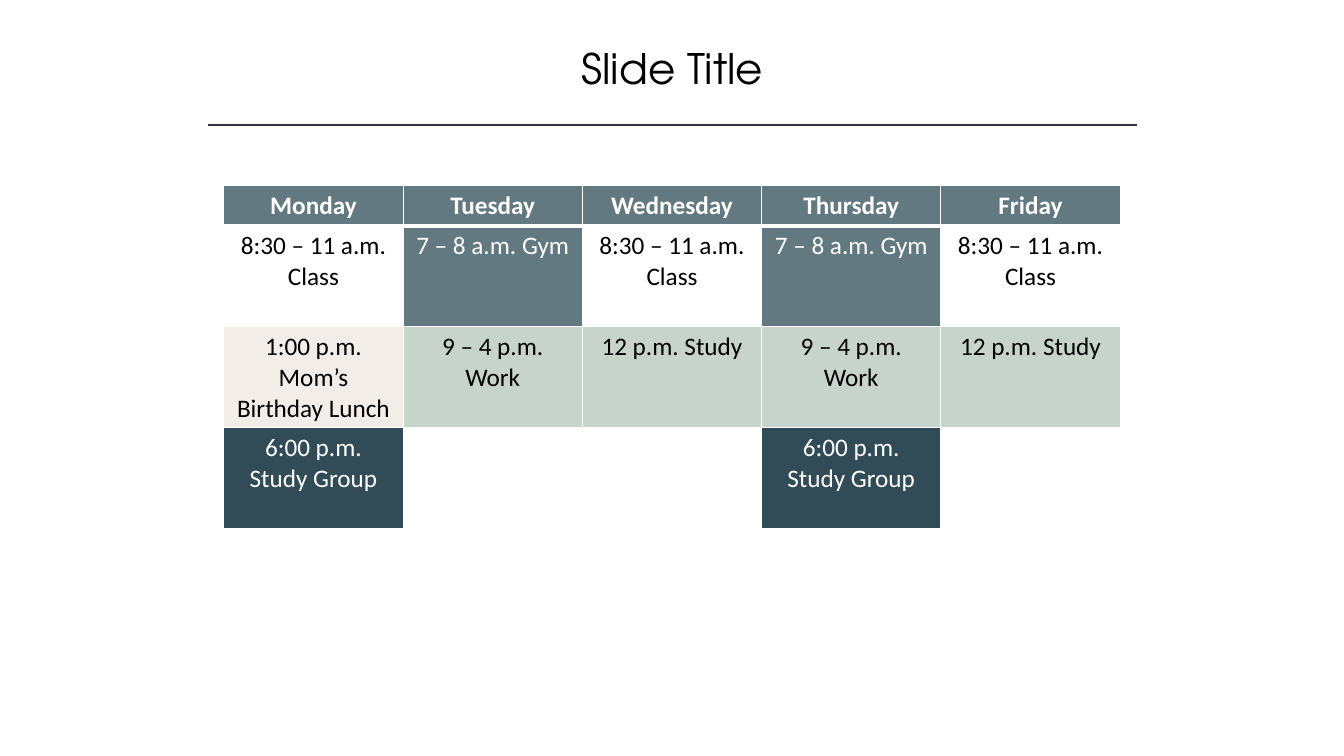
"""Build a slide with a title, a rule and a weekly schedule table."""
from lxml.etree import SubElement
from pptx import Presentation
from pptx.dml.color import RGBColor
from pptx.enum.shapes import MSO_CONNECTOR
from pptx.enum.text import MSO_AUTO_SIZE, PP_ALIGN
from pptx.oxml.ns import qn
from pptx.util import Inches, Pt

COLORS = {
    "black": "000000", "white": "FFFFFF", "rule": "323542", "slate": "627981",
    "cream": "F3EDE7", "sage": "C7D4CB", "navy": "314C57",
}
DARK_FILLS = ("slate", "navy")

CLASS = ("8:30 – 11 a.m.\nClass", None)
GYM = ("7 – 8 a.m. Gym", "slate")
LUNCH = ("1:00 p.m. Mom’s Birthday Lunch", "cream")
WORK = ("9 – 4 p.m. Work", "sage")
STUDY = ("12 p.m. Study", "sage")
GROUP = ("6:00 p.m. Study Group", "navy")
FREE = ("", None)
DAYS = ("Monday", "Tuesday", "Wednesday", "Thursday", "Friday")
SCHEDULE = [
    [(day, "slate") for day in DAYS],
    [CLASS, GYM, CLASS, GYM, CLASS],
    [LUNCH, WORK, STUDY, WORK, STUDY],
    [GROUP, FREE, FREE, GROUP, FREE],
]
ROW_HEIGHTS = (0.4, 1, 1, 1)


def write(tf, text, color, **font):
    tf.text = text
    for p in tf.paragraphs:
        p.alignment = PP_ALIGN.CENTER
        for r in p.runs:
            for name, value in font.items():
                setattr(r.font, name, value)
            r.font.color.rgb = RGBColor.from_string(COLORS[color])


def add_border(cell, side, width):
    ln = SubElement(cell._tc.get_or_add_tcPr(), qn(f"a:ln{side}"), w=str(Pt(width)))
    fill = SubElement(ln, qn("a:solidFill"))
    SubElement(fill, qn("a:srgbClr"), val=COLORS["white"])


prs = Presentation()
prs.slide_width, prs.slide_height = Inches(13.33), Inches(7.5)
s = prs.slides.add_slide(prs.slide_layouts[6])

title = s.shapes.add_textbox(Inches(1.67), Inches(0.37), Inches(10), Inches(0.61))
title.text_frame.word_wrap = True
title.text_frame.auto_size = MSO_AUTO_SIZE.SHAPE_TO_FIT_TEXT
write(title.text_frame, "Slide Title", "black", name="TeX Gyre Adventor", size=Pt(30))

rule = s.shapes.add_connector(
    MSO_CONNECTOR.STRAIGHT, Inches(2.06), Inches(1.24), Inches(11.28), Inches(1.24))
rule.line.color.rgb = RGBColor.from_string(COLORS["rule"])
rule.line.width = Pt(1)
SubElement(rule._element.spPr, qn("a:effectLst"))

table = s.shapes.add_table(
    len(SCHEDULE), len(DAYS), Inches(2.22), Inches(1.84),
    Inches(8.89), Inches(sum(ROW_HEIGHTS))).table
for row, height in zip(table.rows, ROW_HEIGHTS):
    row.height = Inches(height)

for i, entries in enumerate(SCHEDULE):
    for j, (text, fill) in enumerate(entries):
        cell = table.cell(i, j)
        widths = {"L": 1, "R": 1, "T": 3 if i == 1 else 1, "B": 3 if i == 0 else 1}
        for side, width in widths.items():
            add_border(cell, side, width)
        if fill:
            cell.fill.solid()
            cell.fill.fore_color.rgb = RGBColor.from_string(COLORS[fill])
        else:
            cell.fill.background()
        color = "white" if fill in DARK_FILLS else "black"
        write(cell.text_frame, text, color, name="Calibri", size=Pt(18), bold=i == 0)

prs.save("out.pptx")
